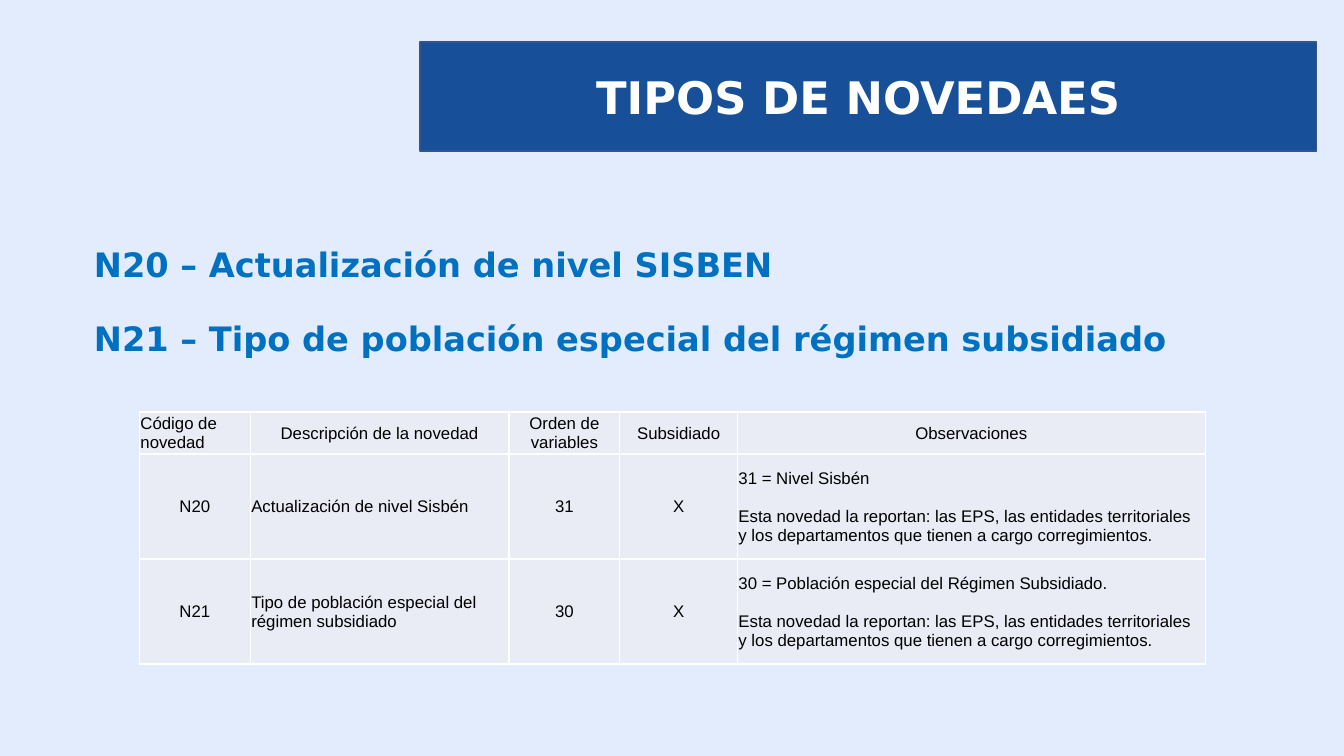
import pptx
import pptx.dml.color
import pptx.enum.shapes
import pptx.enum.text
import pptx.oxml
import pptx.oxml.ns
import pptx.util

RGBColor = pptx.dml.color.RGBColor
Align = pptx.enum.text.PP_ALIGN

BACKGROUND = RGBColor(0xE2, 0xEC, 0xFD)
BANNER = RGBColor(0x17, 0x50, 0x99)
BANNER_LINE = RGBColor(0x32, 0x54, 0x91)
HEADING = RGBColor(0x00, 0x70, 0xC0)
CELL = RGBColor(0xE9, 0xEB, 0xF5)
WHITE = RGBColor(0xFF, 0xFF, 0xFF)
BLACK = RGBColor(0x00, 0x00, 0x00)

REPORTERS = (
    "Esta novedad la reportan: las EPS, las entidades territoriales "
    "y los departamentos que tienen a cargo corregimientos."
)
HEADER = [
    "Código de novedad",
    "Descripción de la novedad",
    "Orden de variables",
    "Subsidiado",
    "Observaciones",
]
ROWS = [
    ["N20", "Actualización de nivel Sisbén", "31", "X", ["31 = Nivel Sisbén", REPORTERS]],
    [
        "N21",
        "Tipo de población especial del régimen subsidiado",
        "30",
        "X",
        ["30 = Población especial del Régimen Subsidiado.", REPORTERS],
    ],
]
HEADER_ALIGNMENT = [Align.LEFT] + [Align.CENTER] * 4
ROW_ALIGNMENT = [Align.CENTER, Align.LEFT, Align.CENTER, Align.CENTER, Align.LEFT]


class SlideBuilder:
    """Draw styled elements on one slide, placed on a grid of 160 by 90 units."""

    title_font = "DejaVu Sans"
    table_font = "Arial"

    def __init__(self, presentation):
        self.column = presentation.slide_width / 160
        self.row = presentation.slide_height / 90
        self.slide = presentation.slides.add_slide(presentation.slide_layouts[6])
        fill = self.slide.background.fill
        fill.solid()
        fill.fore_color.rgb = BACKGROUND

    def place(self, left, top, width, height):
        return (
            round(left * self.column),
            round(top * self.row),
            round(width * self.column),
            round(height * self.row),
        )

    def paragraphs(self, frame, texts, font, size, color, alignment, bold=False, spacing=None, gap=0):
        for index, text in enumerate(texts):
            paragraph = frame.add_paragraph() if index else frame.paragraphs[0]
            paragraph.alignment = alignment
            if spacing:
                paragraph.line_spacing = spacing
            if index:
                paragraph.space_before = pptx.util.Pt(gap)
            run = paragraph.add_run()
            run.text = text
            run.font.name = font
            run.font.size = pptx.util.Pt(size)
            run.font.bold = bold
            run.font.color.rgb = color

    def banner(self, *box):
        shape = self.slide.shapes.add_shape(
            pptx.enum.shapes.MSO_SHAPE.RECTANGLE, *self.place(*box)
        )
        shape.shadow.inherit = False
        shape.fill.solid()
        shape.fill.fore_color.rgb = BANNER
        shape.line.color.rgb = BANNER_LINE
        shape.line.width = pptx.util.Pt(1)

    def text(self, box, texts, size, color, alignment, grow=False, **style):
        frame = self.slide.shapes.add_textbox(*self.place(*box)).text_frame
        frame.word_wrap = True
        if grow:
            frame.auto_size = pptx.enum.text.MSO_AUTO_SIZE.SHAPE_TO_FIT_TEXT
        self.paragraphs(frame, texts, self.title_font, size, color, alignment, bold=True, **style)

    def cell(self, cell, content, alignment):
        cell.vertical_anchor = pptx.enum.text.MSO_ANCHOR.MIDDLE
        cell.margin_left = cell.margin_right = cell.margin_top = pptx.util.Inches(0.01)
        cell.margin_bottom = 0
        texts = [content] if isinstance(content, str) else content
        self.paragraphs(cell.text_frame, texts, self.table_font, 12, BLACK, alignment, gap=13.8)
        properties = cell._tc.get_or_add_tcPr()
        for side in ("lnL", "lnR", "lnT", "lnB"):
            properties.append(pptx.oxml.parse_xml(
                f'<a:{side} {pptx.oxml.ns.nsdecls("a")} w="12700"><a:solidFill>'
                f'<a:srgbClr val="{WHITE}"/></a:solidFill></a:{side}>'
            ))
        cell.fill.solid()
        cell.fill.fore_color.rgb = CELL

    def table(self, left, top, widths, heights, rows, alignments):
        box = self.place(left, top, sum(widths), sum(heights))
        table = self.slide.shapes.add_table(len(rows), len(widths), *box).table
        table.first_row = table.horz_banding = False
        for column, width in zip(table.columns, widths):
            column.width = round(width * self.column)
        for row, height, contents, row_alignments in zip(table.rows, heights, rows, alignments):
            row.height = round(height * self.row)
            for cell, content, alignment in zip(row.cells, contents, row_alignments):
                self.cell(cell, content, alignment)


def main():
    presentation = pptx.Presentation()
    presentation.slide_width = pptx.util.Inches(13.33)
    presentation.slide_height = pptx.util.Inches(7.5)
    builder = SlideBuilder(presentation)
    builder.banner(50, 5, 106.7, 13)
    builder.text((51.1, 7.7, 102.2, 7.7), ["TIPOS DE NOVEDAES"], 32, WHITE, Align.CENTER, grow=True)
    builder.text(
        (10, 26, 143.4, 22.8),
        [
            "N20 – Actualización de nivel SISBEN",
            "N21 – Tipo de población especial del régimen subsidiado",
        ],
        24, HEADING, Align.JUSTIFY, spacing=1.5, gap=10,
    )
    builder.table(
        16.6, 49.05,
        widths=[13.2, 30.8, 13.2, 14, 55.7],
        heights=[5, 12.5, 12.5],
        rows=[HEADER, *ROWS],
        alignments=[HEADER_ALIGNMENT, ROW_ALIGNMENT, ROW_ALIGNMENT],
    )
    presentation.save("out.pptx")


if __name__ == "__main__":
    main()
